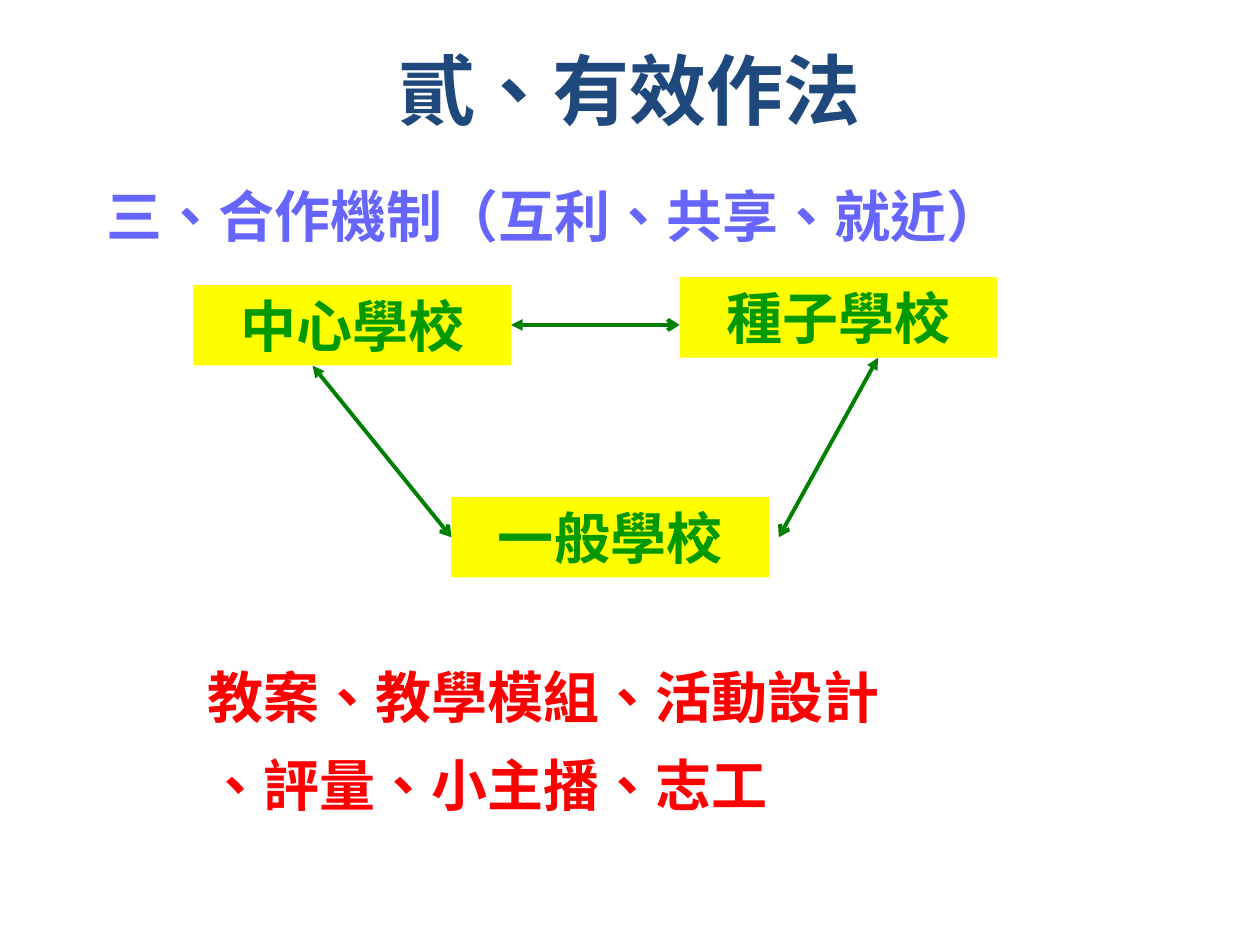
from dataclasses import dataclass

from lxml.etree import SubElement
from pptx import Presentation
from pptx.dml.color import RGBColor as Rgb
from pptx.enum.lang import MSO_LANGUAGE_ID as Lang
from pptx.enum.shapes import MSO_CONNECTOR as Connector, MSO_SHAPE as Shape
from pptx.enum.text import MSO_ANCHOR as Anchor, PP_ALIGN as Align
from pptx.oxml.ns import qn
from pptx.util import Cm, Pt


@dataclass(frozen=True)
class Theme:
    title: Rgb = Rgb(0x1F, 0x49, 0x7D)
    heading: Rgb = Rgb(0x66, 0x66, 0xFF)
    accent: Rgb = Rgb(0xFF, 0x00, 0x00)
    school: Rgb = Rgb(0x00, 0x99, 0x00)
    school_fill: Rgb = Rgb(0xFF, 0xFF, 0x00)
    arrow: Rgb = Rgb(0x00, 0x80, 0x00)
    title_font: str = "Times New Roman"
    body_font: str = "Noto Sans CJK SC"
    school_font: str = "Arial"
    title_size: Pt = Pt(44)
    body_size: Pt = Pt(32)
    body_leading: Pt = Pt(50)
    arrow_width: Pt = Pt(2.25)


class SlideBuilder:
    def __init__(self, page, theme):
        self.page = page
        self.theme = theme

    def style(self, para, text, face, size, color):
        para.text = text
        font = para.font
        font.name, font.size, font.bold = face, size, True
        font.color.rgb = color
        font.language_id = Lang.TRADITIONAL_CHINESE

    def text_box(self, left, top, width, height):
        box = self.page.shapes.add_textbox(Cm(left), Cm(top), Cm(width), Cm(height))
        box.text_frame.word_wrap = True
        return box.text_frame

    def title(self, text, *place):
        frame = self.text_box(*place)
        frame.vertical_anchor = Anchor.BOTTOM
        para = frame.paragraphs[0]
        para.alignment = Align.CENTER
        self.style(para, text, self.theme.title_font, self.theme.title_size,
                   self.theme.title)

    def body(self, lines, color, *place):
        frame = self.text_box(*place)
        for index, line in enumerate(lines):
            para = frame.add_paragraph() if index else frame.paragraphs[0]
            para.line_spacing = self.theme.body_leading
            self.style(para, line, self.theme.body_font, self.theme.body_size, color)

    def school(self, text, left, top, width=6.4, height=1.62):
        box = self.page.shapes.add_shape(
            Shape.RECTANGLE, Cm(left), Cm(top), Cm(width), Cm(height))
        box.shadow.inherit = False
        box.fill.solid()
        box.fill.fore_color.rgb = self.theme.school_fill
        box.line.fill.background()
        box.text_frame.vertical_anchor = Anchor.MIDDLE
        para = box.text_frame.paragraphs[0]
        para.alignment = Align.CENTER
        self.style(para, text, self.theme.school_font, self.theme.body_size,
                   self.theme.school)

    def arrow(self, start, end):
        link = self.page.shapes.add_connector(
            Connector.STRAIGHT, *(Cm(value) for value in (*start, *end)))
        link.line.color.rgb = self.theme.arrow
        link.line.width = self.theme.arrow_width
        outline = link.line._get_or_add_ln()
        SubElement(outline, qn("a:headEnd"), type="triangle")
        SubElement(outline, qn("a:tailEnd"), type="arrow")
        SubElement(link._element.spPr, qn("a:effectLst"))


def main():
    deck = Presentation()
    deck.slide_width, deck.slide_height = Cm(25.4), Cm(19.05)
    theme = Theme()
    slide = SlideBuilder(deck.slides.add_slide(deck.slide_layouts[6]), theme)

    # Title and section heading
    slide.title("貳、有效作法", 0.7, 0.53, 24, 2.31)
    slide.body(["三、合作機制（互利、共享、就近）"], theme.heading, 1.9, 3.12, 22, 2)

    # Schools
    slide.school("中心學校", 3.9, 5.75)
    slide.school("一般學校", 9.1, 10.02)
    slide.school("種子學校", 13.7, 5.59)

    # Cooperation between the schools
    slide.arrow((10.3, 6.55), (13.7, 6.55))
    slide.arrow((6.3, 7.37), (9.1, 10.83))
    slide.arrow((17.7, 7.21), (15.7, 10.83))

    # Shared resources
    slide.body(["教案、教學模組、活動設計", "、評量、小主播、志工"],
               theme.accent, 3.93, 12.83, 20, 3.8)

    deck.save("out.pptx")


if __name__ == "__main__":
    main()
